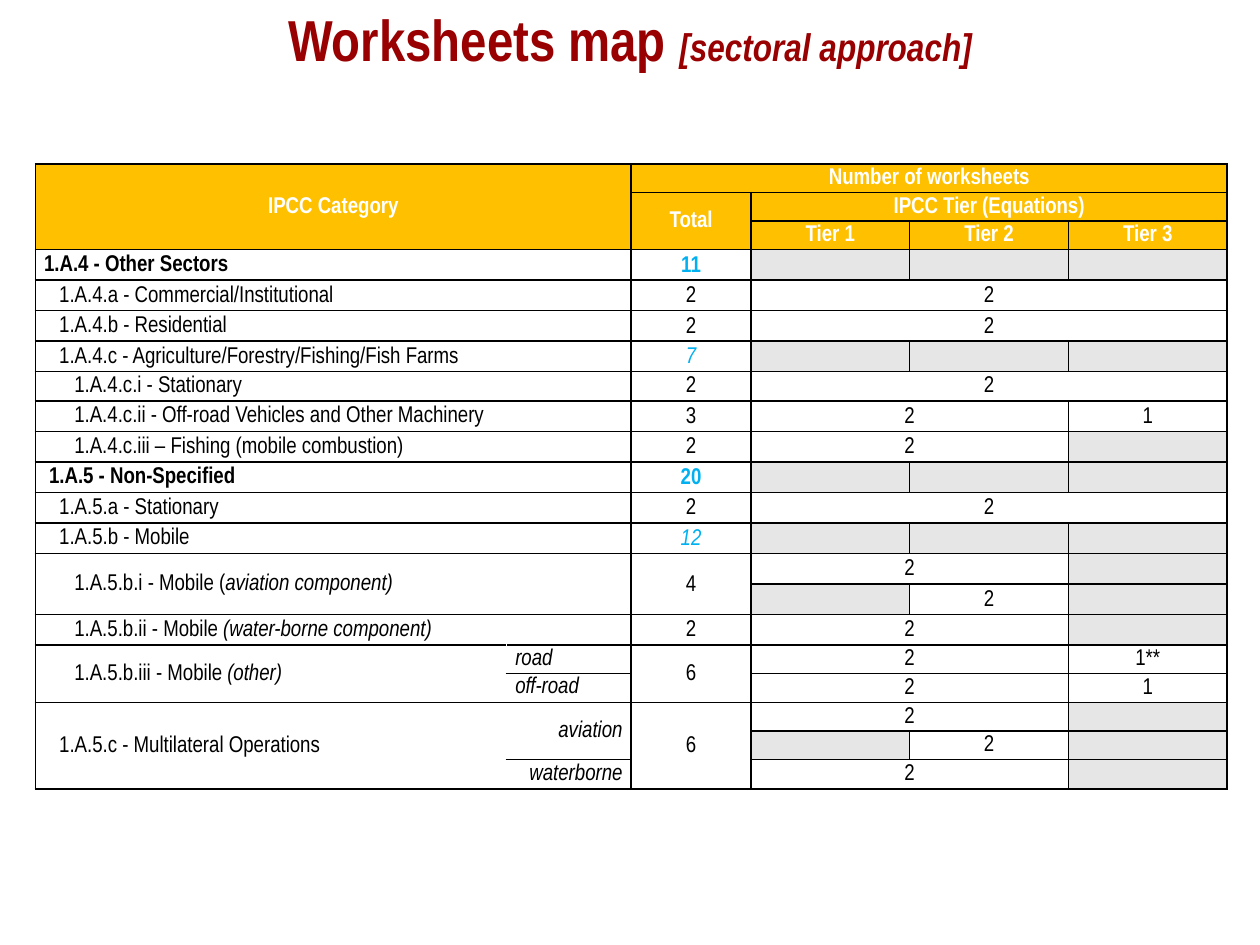
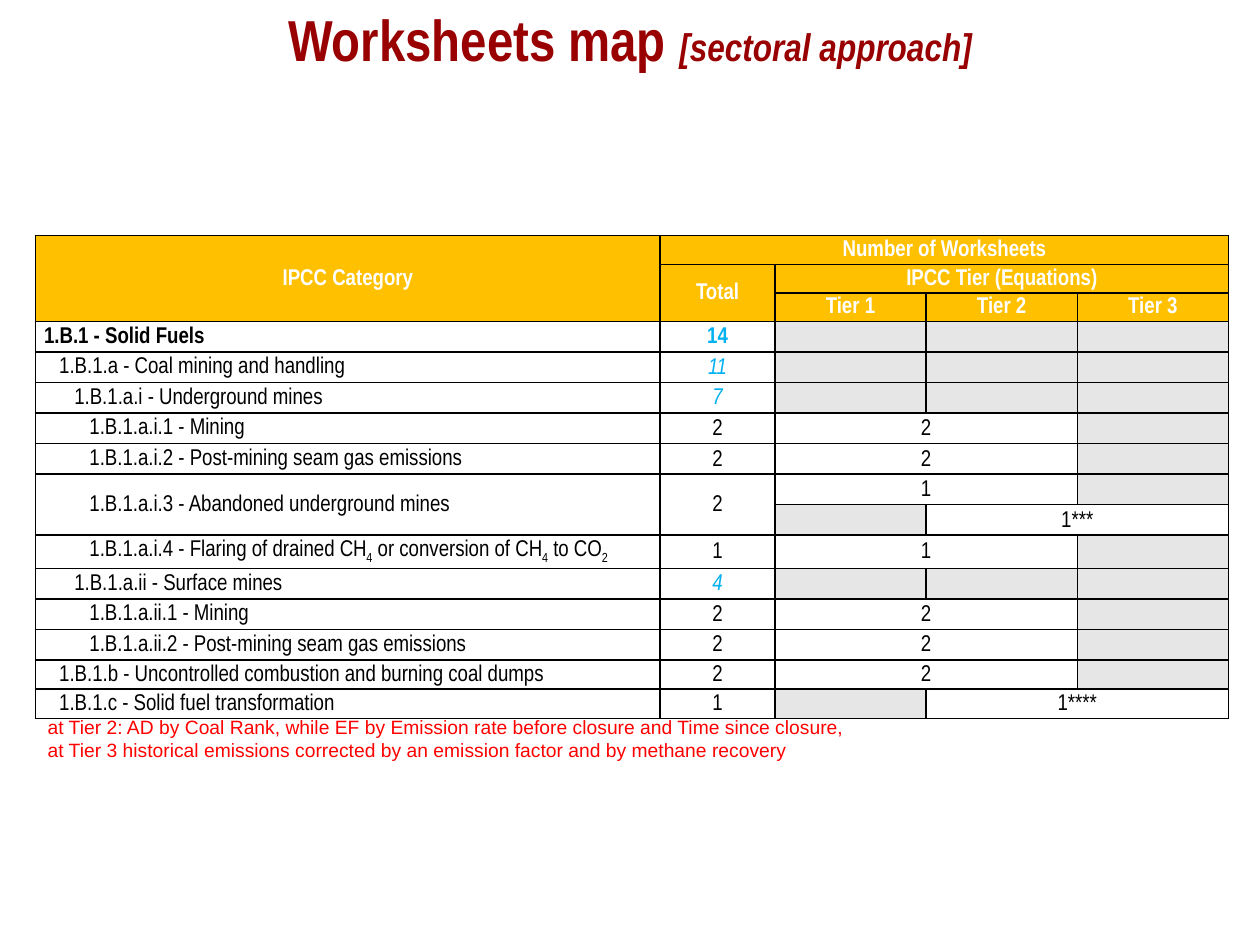
from lxml.etree import SubElement
from pptx import Presentation
from pptx.dml.color import RGBColor
from pptx.enum.text import MSO_ANCHOR, PP_ALIGN
from pptx.oxml.ns import qn
from pptx.util import Inches, Pt

WIDTH, HEIGHT = 10, 7.5
NARROW = "Arial Narrow"
MAROON, AMBER, GREY, BLUE = "990002", "FFC000", "E6E6E6", "00B0F0"
BLACK, WHITE, RED = "000000", "FFFFFF", "FF0000"
LEFT, CENTER, RIGHT = PP_ALIGN.LEFT, PP_ALIGN.CENTER, PP_ALIGN.RIGHT
BODY_SIZE, LEVEL_INDENT = 13, 0.12
LOOSE, TIGHT, SUBSCRIPTED = 0.24, 0.225, 0.265
TABLE_LEFT, TABLE_WIDTH = 0.28, 9.45

TITLE = [("Worksheets map ", 33, False), ("[sectoral approach]", 22, True)]
NOTE = [
    "at Tier 2: AD by Coal Rank, while EF by Emission rate before closure and Time since closure,",
    "at Tier 3 historical emissions corrected by an emission factor and by methane recovery",
]

# %s
""" """
NONE = ["", "", ""]
ALL_TIERS = [("2", 3)]
TIERS_1_2 = [("2", 2), ""]
TIER_2_ONLY = ["", "2", ""]


def entry(level, label, total, *lines, kind="plain", height=LOOSE, parts=()):
    runs = [(label, "")] if isinstance(label, str) else label
    return dict(level=level, label=runs, total=total, lines=lines,
                kind=kind, height=height, parts=parts)


SHEETS = [
    dict(
        top=1.3, heading="Number of worksheets", note=[],
        category=[3.74, 0.99], total=0.95, tier=1.26,
        entries=[
            entry(0, "1.A.4 - Other Sectors", "11", NONE, kind="sector"),
            entry(1, "1.A.4.a - Commercial/Institutional", "2", ALL_TIERS),
            entry(1, "1.A.4.b - Residential", "2", ALL_TIERS),
            entry(1, "1.A.4.c - Agriculture/Forestry/Fishing/Fish Farms", "7", NONE, kind="subtotal"),
            entry(2, "1.A.4.c.i - Stationary", "2", ALL_TIERS, height=TIGHT),
            entry(2, "1.A.4.c.ii - Off-road Vehicles and Other Machinery", "3", [("2", 2), "1"]),
            entry(2, "1.A.4.c.iii – Fishing (mobile combustion)", "2", TIERS_1_2),
            entry(0.33, "1.A.5 - Non-Specified", "20", NONE, kind="sector"),
            entry(1, "1.A.5.a - Stationary", "2", ALL_TIERS),
            entry(1, "1.A.5.b - Mobile", "12", NONE, kind="subtotal"),
            entry(2, [("1.A.5.b.i - Mobile (", ""), ("aviation component)", "italic")], "4",
                  TIERS_1_2, TIER_2_ONLY),
            entry(2, [("1.A.5.b.ii - Mobile ", ""), ("(water-borne component)", "italic")], "2",
                  TIERS_1_2),
            entry(2, [("1.A.5.b.iii - Mobile ", ""), ("(other)", "italic")], "6",
                  [("2", 2), "1**"], [("2", 2), "1"], height=TIGHT,
                  parts=[("road", 1, LEFT), ("off-road", 1, LEFT)]),
            entry(1, "1.A.5.c - Multilateral Operations", "6",
                  TIERS_1_2, TIER_2_ONLY, TIERS_1_2, height=TIGHT,
                  parts=[("aviation", 2, RIGHT), ("waterborne", 1, RIGHT)]),
        ],
    ),
    dict(
        top=1.87, heading="Number of Worksheets", note=NOTE,
        category=[4.96], total=0.91, tier=1.2,
        entries=[
            entry(0, "1.B.1 - Solid Fuels", "14", NONE, kind="sector"),
            entry(1, "1.B.1.a - Coal mining and handling", "11", NONE, kind="subtotal"),
            entry(2, "1.B.1.a.i - Underground mines", "7", NONE, kind="subtotal"),
            entry(3, "1.B.1.a.i.1 - Mining", "2", TIERS_1_2),
            entry(3, "1.B.1.a.i.2 - Post-mining seam gas emissions", "2", TIERS_1_2),
            entry(3, "1.B.1.a.i.3 - Abandoned underground mines", "2",
                  [("1", 2), ""], ["", ("1***", 2)]),
            entry(3, [("1.B.1.a.i.4 - Flaring of drained CH", ""), ("4", "sub"),
                      (" or conversion of CH", ""), ("4", "sub"),
                      (" to CO", ""), ("2", "sub")], "1", [("1", 2), ""], height=SUBSCRIPTED),
            entry(2, "1.B.1.a.ii - Surface mines", "4", NONE, kind="subtotal"),
            entry(3, "1.B.1.a.ii.1 - Mining", "2", TIERS_1_2),
            entry(3, "1.B.1.a.ii.2 - Post-mining seam gas emissions", "2", TIERS_1_2),
            entry(1, "1.B.1.b - Uncontrolled combustion and burning coal dumps", "2", TIERS_1_2,
                  height=TIGHT),
            entry(1, "1.B.1.c - Solid fuel transformation", "1", ["", ("1****", 2)], height=TIGHT),
        ],
    ),
]


def rgb(code):
    return RGBColor.from_string(code)


def add_run(paragraph, text, size, color, font=NARROW, bold=False, italic=False):
    run = paragraph.add_run()
    run.text = text
    run.font.size, run.font.name = Pt(size), font
    run.font.bold, run.font.italic = bold, italic
    run.font.color.rgb = rgb(color)
    return run


def add_text_box(slide, left, top, width, height):
    box = slide.shapes.add_textbox(*map(Inches, (left, top, width, height)))
    box.text_frame.word_wrap = True
    return box.text_frame


def add_title(slide):
    frame = add_text_box(slide, 0, 0, WIDTH, 0.61)
    frame.vertical_anchor = MSO_ANCHOR.MIDDLE
    line = frame.paragraphs[0]
    line.alignment = CENTER
    for text, size, italic in TITLE:
        add_run(line, text, size, MAROON, bold=True, italic=italic)


def add_note(slide, lines, top):
    frame = add_text_box(slide, TABLE_LEFT, top, TABLE_WIDTH, 0.47)
    for index, text in enumerate(lines):
        line = frame.add_paragraph() if index else frame.paragraphs[0]
        add_run(line, text, 11, RED, font="Arial")


def draw_border(cell, side, color=BLACK):
    properties = cell._tc.get_or_add_tcPr()
    tag = qn(f"a:ln{side}")
    border = properties.find(tag)
    if border is None:
        border = SubElement(properties, tag, w=str(Pt(1)))
        SubElement(SubElement(border, qn("a:solidFill")), qn("a:srgbClr"))
    border[0][0].set("val", color)


def prepare(cell):
    for side in "LRTB":
        draw_border(cell, side)
    cell.fill.background()
    cell.vertical_anchor = MSO_ANCHOR.MIDDLE
    cell.margin_left = cell.margin_right = cell.margin_top = Inches(0.01)
    cell.margin_bottom = 0
    SubElement(cell.text_frame.paragraphs[0]._p, qn("a:endParaRPr"), sz=str(BODY_SIZE * 100))


def place(table, row, column, runs, rows=1, columns=1, fill=None, align=CENTER,
          color=BLACK, bold=False, italic=False, loose=False, indent=None):
    cell = table.cell(row, column)
    if rows * columns > 1:
        cell.merge(table.cell(row + rows - 1, column + columns - 1))
    if fill:
        cell.fill.solid()
        cell.fill.fore_color.rgb = rgb(fill)
    if indent is not None:
        cell.margin_left = Inches(0.07 + indent * LEVEL_INDENT)
        cell.margin_right, cell.margin_top = Inches(0.07), 0
    line = cell.text_frame.paragraphs[0]
    line.alignment = align
    if loose:
        line.line_spacing, line.space_after = 1.07, Pt(8)
    for text, style in runs:
        run = add_run(line, text, BODY_SIZE, color, bold=bold,
                      italic=italic or style == "italic")
        if style == "sub":
            run.font._element.set("baseline", "-25000")


def fill_header(table, heading, total_column):
    tier_column = total_column + 1
    header = [
        (0, 0, "IPCC Category", 3, total_column),
        (0, total_column, heading, 1, 4),
        (1, total_column, "Total", 2, 1),
        (1, tier_column, "IPCC Tier (Equations)", 1, 3),
    ] + [(2, tier_column + i, f"Tier {i + 1}", 1, 1) for i in range(3)]
    for row, column, text, rows, columns in header:
        place(table, row, column, [(text, "")], rows, columns, AMBER, color=WHITE, bold=True)


def fill_parts(table, row, parts, span):
    for offset in range(span):
        draw_border(table.cell(row + offset, 0), "R", WHITE)
        draw_border(table.cell(row + offset, 1), "L", WHITE)
    for text, rows, align in parts:
        place(table, row, 1, [(text, "italic")], rows, align=align,
              loose=align == RIGHT, indent=0)
        row += rows


def fill_entry(table, row, item, total_column):
    span, loose = len(item["lines"]), item["height"] != TIGHT
    sector, plain = item["kind"] == "sector", item["kind"] == "plain"
    parts = item["parts"]
    place(table, row, 0, item["label"], span, 1 if parts else total_column, align=LEFT,
          bold=sector, loose=True, indent=item["level"])
    if parts:
        fill_parts(table, row, parts, span)
    place(table, row, total_column, [(item["total"], "")], span, bold=sector,
          color=BLACK if plain else BLUE, italic=item["kind"] == "subtotal", loose=loose)
    for offset, tiers in enumerate(item["lines"]):
        column = total_column + 1
        for tier in tiers:
            text, columns = tier if isinstance(tier, tuple) else (tier, 1)
            if text:
                place(table, row + offset, column, [(text, "")], columns=columns, loose=loose)
            else:
                place(table, row + offset, column, [], fill=GREY)
            column += columns
    return row + span


def add_sheet(slide, sheet):
    widths = sheet["category"] + [sheet["total"]] + [sheet["tier"]] * 3
    heights = [TIGHT] * 3 + [item["height"] for item in sheet["entries"] for _ in item["lines"]]
    total_column = len(sheet["category"])
    table = slide.shapes.add_table(
        len(heights), len(widths),
        *map(Inches, (TABLE_LEFT, sheet["top"], TABLE_WIDTH, sum(heights)))).table
    table.first_row = table.horz_banding = False
    for column, width in zip(table.columns, widths):
        column.width = Inches(width)
    for row, height in zip(table.rows, heights):
        row.height = Inches(height)
    for cell in table.iter_cells():
        prepare(cell)
    fill_header(table, sheet["heading"], total_column)
    row = 3
    for item in sheet["entries"]:
        row = fill_entry(table, row, item, total_column)
    if sheet["note"]:
        add_note(slide, sheet["note"], 5.63)


def main():
    deck = Presentation()
    deck.slide_width, deck.slide_height = Inches(WIDTH), Inches(HEIGHT)
    for sheet in SHEETS:
        slide = deck.slides.add_slide(deck.slide_layouts[6])
        add_title(slide)
        add_sheet(slide, sheet)
    deck.save("out.pptx")


if __name__ == "__main__":
    main()
